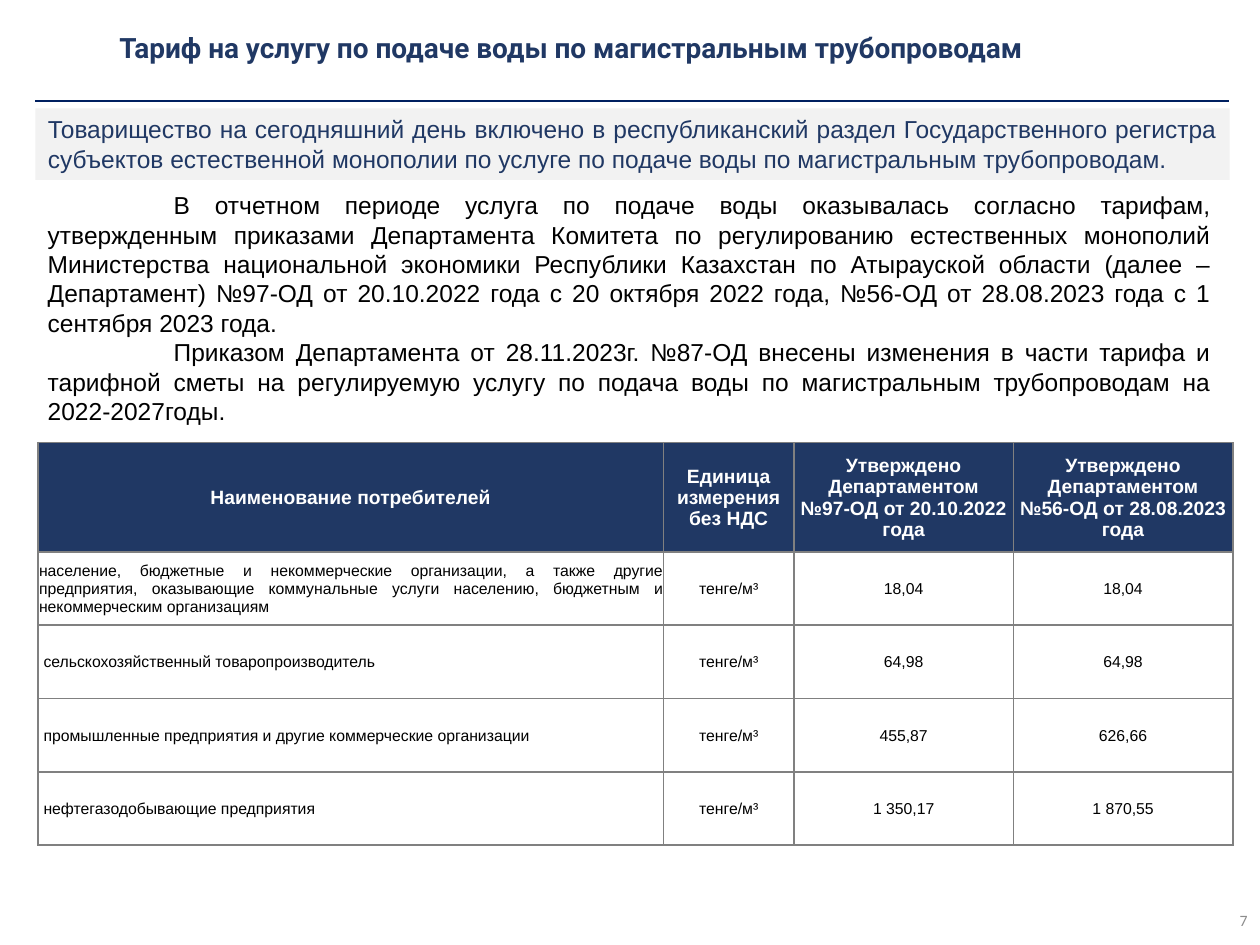
import pptx
import pptx.util
import pptx.dml.color
import pptx.enum.shapes
import pptx.enum.text
import lxml.etree

Pt = pptx.util.Pt
PP_ALIGN = pptx.enum.text.PP_ALIGN
MIDDLE = pptx.enum.text.MSO_ANCHOR.MIDDLE
NAVY, BLACK, WHITE = "203864", "000000", "FFFFFF"
A = "http://schemas.openxmlformats.org/drawingml/2006/main"


def rgb(value):
    return pptx.dml.color.RGBColor.from_string(value)


def write(tf, text, size, color, align, font="Arial", bold=False):
    tf.word_wrap = True
    tf.text = text
    for p in tf.paragraphs:
        p.alignment = align
        for r in p.runs:
            r.font.size = Pt(size)
            r.font.name = font
            r.font.bold = bold
            r.font.color.rgb = rgb(color)


prs = pptx.Presentation()
prs.slide_width, prs.slide_height = Pt(720), Pt(540)
s = prs.slides.add_slide(prs.slide_layouts[6])

body = s.shapes.add_textbox(Pt(20.2), Pt(105.1), Pt(679), Pt(143.3))
write(
    body.text_frame,
    "В отчетном периоде услуга по подаче воды оказывалась согласно тарифам, "
    "утвержденным приказами Департамента Комитета по регулированию естественных "
    "монополий Министерства национальной экономики Республики Казахстан по "
    "Атырауской области (далее – Департамент) №97-ОД от 20.10.2022 года "
    "с 20 октября 2022 года, №56-ОД от 28.08.2023 года с 1 сентября 2023 года.\n"
    "Приказом Департамента от 28.11.2023г. №87-ОД внесены изменения в части тарифа "
    "и тарифной сметы на регулируемую услугу по подача воды по магистральным "
    "трубопроводам на 2022-2027годы.",
    14, BLACK, PP_ALIGN.JUSTIFY,
)
for p in body.text_frame.paragraphs:
    p._p.get_or_add_pPr().set("indent", str(Pt(72)))

unit = "тенге/м³"
rows = [
    ("Наименование потребителей", "Единица измерения без НДС",
     "Утверждено Департаментом\n№97-ОД от 20.10.2022 года",
     "Утверждено Департаментом\n№56-ОД от 28.08.2023 года"),
    ("население, бюджетные и некоммерческие организации, а также другие предприятия, "
     "оказывающие коммунальные услуги населению, бюджетным и некоммерческим организациям",
     unit, "18,04", "18,04"),
    ("сельскохозяйственный товаропроизводитель", unit, "64,98", "64,98"),
    ("промышленные предприятия и другие коммерческие организации",
     unit, "455,87", "626,66"),
    ("нефтегазодобывающие предприятия", unit, "1 350,17", "1 870,55"),
]
widths = [357.4, 74.6, 125.4, 125.4]
heights = [62.4] + [41.9] * 4
table = s.shapes.add_table(
    len(rows), len(widths), Pt(21.7), Pt(253), Pt(sum(widths)), Pt(sum(heights))
).table
table.first_row = table.horz_banding = False
for column, width in zip(table.columns, widths):
    column.width = Pt(width)
for i, (row, height) in enumerate(zip(rows, heights)):
    table.rows[i].height = Pt(height)
    for j, text in enumerate(row):
        cell = table.cell(i, j)
        cell.vertical_anchor = MIDDLE
        cell.margin_left = Pt(3.2 if i > 1 and j == 0 else 0.6)
        cell.margin_right = cell.margin_top = Pt(0.6)
        cell.margin_bottom = 0
        tcPr = cell._tc.get_or_add_tcPr()
        for side in ("lnL", "lnR", "lnT", "lnB"):
            ln = lxml.etree.SubElement(tcPr, f"{{{A}}}{side}", w=str(Pt(1)))
            fill = lxml.etree.SubElement(ln, f"{{{A}}}solidFill")
            lxml.etree.SubElement(fill, f"{{{A}}}srgbClr", val="808080")
        if i == 0:
            cell.fill.solid()
            cell.fill.fore_color.rgb = rgb(NAVY)
            write(cell.text_frame, text, 11, WHITE, PP_ALIGN.CENTER, bold=True)
        else:
            cell.fill.background()
            align = PP_ALIGN.CENTER if j else PP_ALIGN.JUSTIFY
            write(cell.text_frame, text, 9, BLACK, align)

number = s.shapes.add_textbox(Pt(558), Pt(511.2), Pt(162), Pt(28.8))
number.text_frame.vertical_anchor = MIDDLE
write(number.text_frame, "7", 9, "8C8C8C", PP_ALIGN.RIGHT, font="Calibri")

title = s.shapes.add_textbox(Pt(61.2), Pt(12.2), Pt(643), Pt(30.2))
title.text_frame.vertical_anchor = MIDDLE
write(title.text_frame, "Тариф на услугу по подаче воды по магистральным трубопроводам",
      16, NAVY, PP_ALIGN.LEFT, font="Roboto", bold=True)

rule = s.shapes.add_connector(
    pptx.enum.shapes.MSO_CONNECTOR.STRAIGHT, Pt(20.2), Pt(57.6), Pt(702), Pt(57.6)
)
rule.line.color.rgb = rgb("002060")
rule.line.width = Pt(1)
lxml.etree.SubElement(rule._element.spPr, f"{{{A}}}effectLst")

banner = s.shapes.add_shape(
    pptx.enum.shapes.MSO_SHAPE.RECTANGLE, Pt(20.2), Pt(61.9), Pt(682.5), Pt(41)
)
banner.shadow.inherit = False
banner.fill.solid()
banner.fill.fore_color.rgb = rgb("F2F2F2")
banner.line.fill.background()
banner.text_frame.vertical_anchor = pptx.enum.text.MSO_ANCHOR.TOP
write(
    banner.text_frame,
    "Товарищество на сегодняшний день включено в республиканский раздел "
    "Государственного регистра субъектов естественной монополии по услуге "
    "по подаче воды по магистральным трубопроводам.",
    14, NAVY, PP_ALIGN.JUSTIFY,
)

prs.save("out.pptx")
